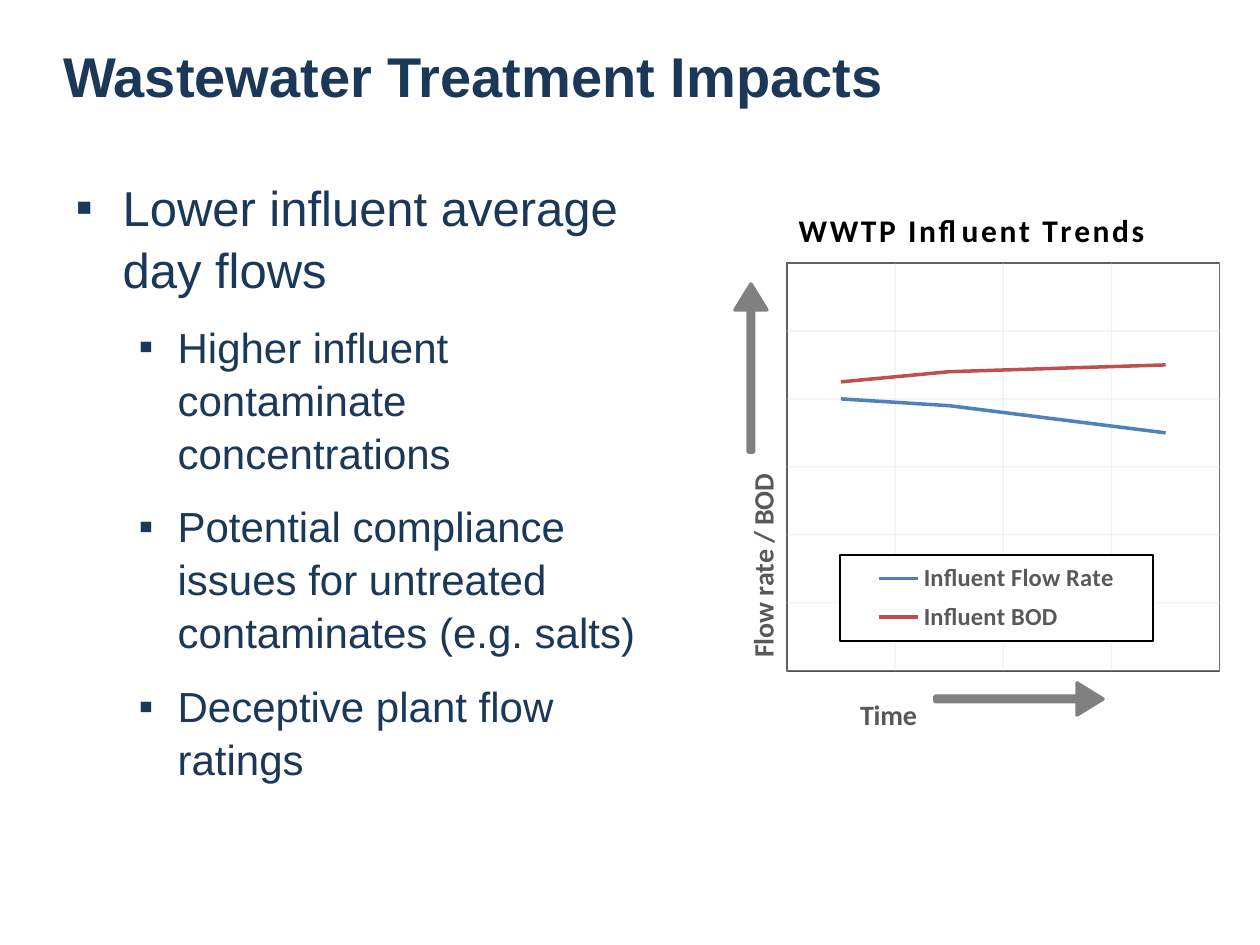
import pptx
import pptx.util
import pptx.chart.data
import pptx.dml.color
import pptx.enum.chart
import pptx.enum.shapes
import pptx.enum.text
import pptx.oxml
import pptx.oxml.ns

PX = 914400 // 126  # EMU in one px
THEME = dict(
    navy="1B3858", black="000000", text="595959", arrow="808080",
    grid="D9D9D9", frame="404040", flow="4F81BD", bod="C0504D",
    head=32, list=28, sub=24, title=18, axis=16, key=14,
    sans="Arial", plot="Calibri",
)
NS = pptx.oxml.ns.nsdecls("a", "c")
rgb = pptx.dml.color.RGBColor.from_string


def write(par, text, size="list", color="navy", face="sans", bold=False,
          lead=None, before=0, track=None):
    run = par.add_run()
    run.text = text
    font = run.font
    font.size = pptx.util.Pt(THEME[size])
    font.name = THEME[face]
    font.bold = bold
    font.color.rgb = rgb(THEME[color])
    if lead:
        par.line_spacing = lead
        par.space_before = pptx.util.Pt(before)
    if track:
        font._element.set("spc", str(track))


def place(node, spot, x, y, w=None, h=None, inner=False):
    """Give a chart part a fixed spot, in px from the chart's corner."""
    for old in node.findall(pptx.oxml.ns.qn("c:layout")):
        node.remove(old)
    rows = '<c:layoutTarget val="inner"/>' if inner else ""
    rows += '<c:xMode val="edge"/><c:yMode val="edge"/>'
    sides = dict(x=x / WIDE, y=y / HIGH)
    if w:
        sides.update(w=w / WIDE, h=h / HIGH)
    rows += "".join(f'<c:{key} val="{val:.4f}"/>' for key, val in sides.items())
    node.insert(spot, pptx.oxml.parse_xml(
        f"<c:layout {NS}><c:manualLayout>{rows}</c:manualLayout></c:layout>"))


deck = pptx.Presentation()
deck.slide_width, deck.slide_height = 1260 * PX, 945 * PX
slide = deck.slides.add_slide(deck.slide_layouts[1])

# Title
head = slide.shapes.title
head.left, head.top, head.width, head.height = 0, 0, 1260 * PX, 147 * PX
frame = head.text_frame
frame.auto_size = pptx.enum.text.MSO_AUTO_SIZE.NONE
frame.vertical_anchor = pptx.enum.text.MSO_ANCHOR.TOP
frame.margin_left = frame.margin_right = 63 * PX
frame.margin_top, frame.margin_bottom = 38 * PX, 6 * PX
par = frame.paragraphs[0]
par.alignment = pptx.enum.text.PP_ALIGN.LEFT
write(par, "Wastewater Treatment Impacts", size="head", bold=True, lead=1.05)

# Bullet list
body = slide.placeholders[1]
body.left, body.top, body.width, body.height = (
    63 * PX, 168 * PX, 588 * PX, 630 * PX)
frame = body.text_frame
frame.auto_size = pptx.enum.text.MSO_AUTO_SIZE.NONE
points = [
    (0, "Lower influent average day flows"),
    (1, "Higher influent contaminate concentrations"),
    (1, "Potential compliance issues for untreated contaminates (e.g. salts)"),
    (1, "Deceptive plant flow ratings"),
]
for i, (level, text) in enumerate(points):
    par = frame.add_paragraph() if i else frame.paragraphs[0]
    par.level = level
    props = par._p.get_or_add_pPr()
    left, hang = [(47, 47), (102, 39)][level]
    props.set("marL", str(left * PX))
    props.set("indent", str(-hang * PX))
    for tag in ('buFont {} typeface="Arial"', 'buChar {} char="▪"'):
        props.append(pptx.oxml.parse_xml(f"<a:{tag.format(NS)}/>"))
    write(par, text, size="sub" if level else "list",
          lead=1.05, before=12 if i else 0)

# Stacked line chart
WIDE, HIGH = 536, 567
data = pptx.chart.data.CategoryChartData()
data.categories = ["1", "2", "3", "4"]
data.add_series("Influent Flow Rate", [100, 98, 94, 90])
data.add_series("Influent BOD", [5, 10, 15, 20])
chart = slide.shapes.add_chart(
    pptx.enum.chart.XL_CHART_TYPE.LINE_STACKED,
    703 * PX, 179 * PX, WIDE * PX, HIGH * PX, data).chart
chart.font.name = THEME["plot"]
chart.font.size = pptx.util.Pt(10)
chart.font.color.rgb = rgb(THEME["black"])
for line, color in zip(chart.plots[0].series, ("flow", "bod")):
    line.smooth = False
    line.format.line.color.rgb = rgb(THEME[color])
    line.format.line.width = pptx.util.Pt(2)

# Chart title
chart.has_title = True
title = chart.chart_title
write(title.text_frame.paragraphs[0], "WWTP Influent Trends", size="title",
      color="black", face="plot", bold=True, track=150)
place(title._element, 1, 90, 24)

# Axes: hidden scales, faint grid, fixed titles
chart.value_axis.minimum_scale = 20
chart.value_axis.maximum_scale = 140
chart.value_axis.major_unit = 20
for axis, text, x, y, turn in (
    (chart.category_axis, "Time", 152, 512, 0),
    (chart.value_axis, "Flow rate / BOD", 36, 290, -5400000),
):
    axis.visible = False
    axis.has_major_gridlines = True
    grid = axis.major_gridlines.format.line
    grid.color.rgb = rgb(THEME["grid"])
    grid.width = pptx.util.Pt(0.75)
    tint = grid.fill._xPr.find(".//" + pptx.oxml.ns.qn("a:srgbClr"))
    tint.append(pptx.oxml.parse_xml(f'<a:alpha {NS} val="32000"/>'))
    label = axis.axis_title
    write(label.text_frame.paragraphs[0], text, size="axis", color="text",
          face="plot", bold=True)
    label.text_frame._txBody.bodyPr.set("rot", str(turn))
    place(label._element, 1, x, y)

# Legend
chart.has_legend = True
key = chart.legend
key.position = pptx.enum.chart.XL_LEGEND_POSITION.TOP
key.include_in_layout = True
key.font.size = pptx.util.Pt(THEME["key"])
key.font.name = THEME["plot"]
key.font.bold = True
key.font.color.rgb = rgb(THEME["text"])
place(key._element, 1, 137, 376, 313, 86)

# Frames of the plot and the legend
plot = chart._chartSpace.chart.plotArea
place(plot, 0, 84, 84, 433, 408, inner=True)
box = ('<c:spPr {}>{}<a:ln w="9525"><a:solidFill><a:srgbClr val="{}"/>'
       "</a:solidFill></a:ln></c:spPr>")
white = '<a:solidFill><a:srgbClr val="FFFFFF"/></a:solidFill>'
plot.append(pptx.oxml.parse_xml(box.format(NS, "<a:noFill/>", THEME["frame"])))
key._element.find(pptx.oxml.ns.qn("c:txPr")).addprevious(
    pptx.oxml.parse_xml(box.format(NS, white, THEME["black"])))

# Axis arrows
for x, y, turn in ((667, 352, 270), (935, 683, 0)):
    arrow = slide.shapes.add_shape(
        pptx.enum.shapes.MSO_SHAPE.RIGHT_ARROW,
        x * PX, y * PX, 168 * PX, 32 * PX)
    arrow.rotation = turn
    arrow.adjustments[0], arrow.adjustments[1] = 0.17, 0.81
    arrow.shadow.inherit = False
    arrow.fill.solid()
    arrow.fill.fore_color.rgb = rgb(THEME["arrow"])
    arrow.line.color.rgb = rgb(THEME["arrow"])
    arrow.line.width = pptx.util.Pt(2)

deck.save("out.pptx")
